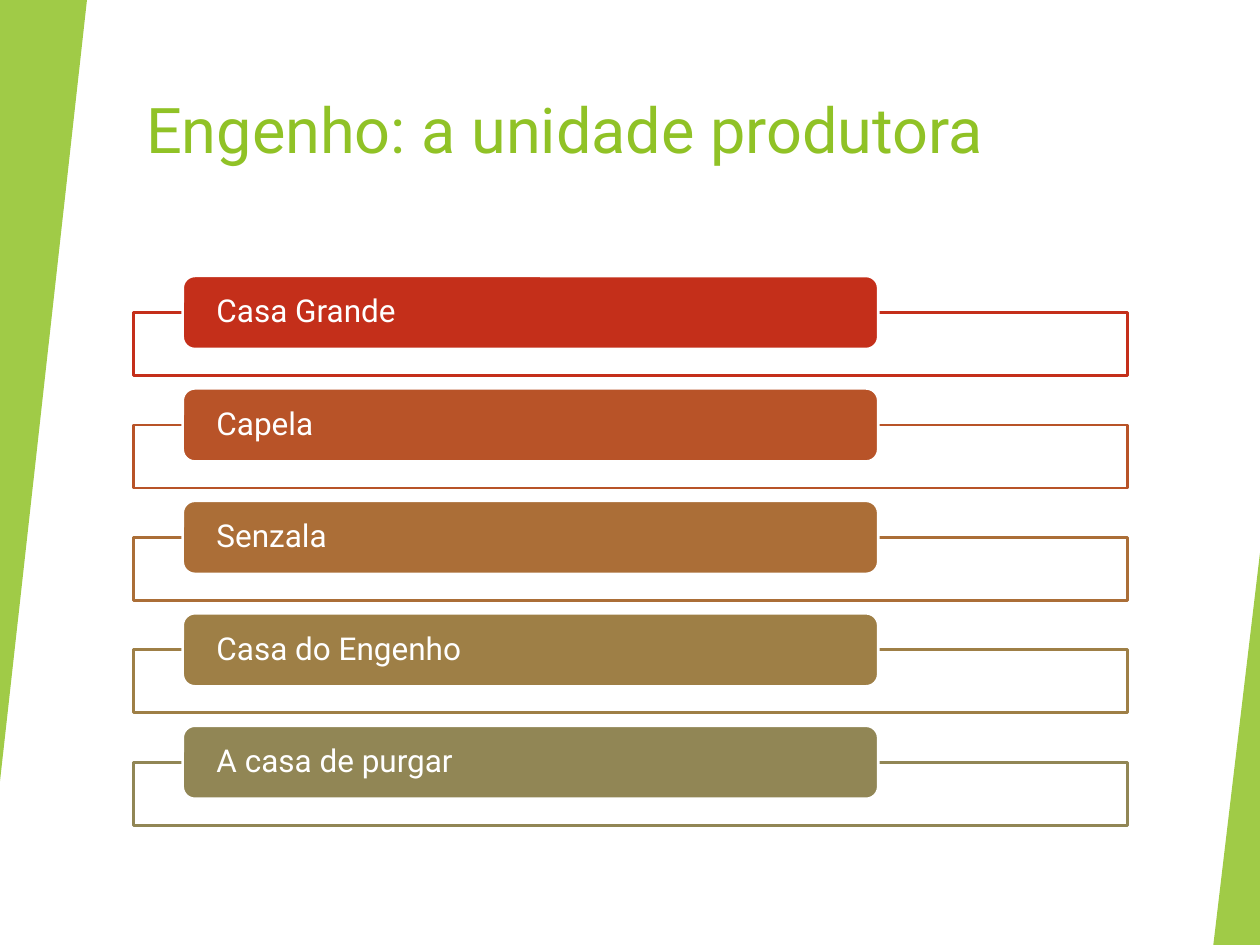
from pptx import Presentation
from pptx.dml.color import RGBColor
from pptx.enum.shapes import MSO_SHAPE as Shape
from pptx.enum.text import MSO_ANCHOR as Anchor, PP_ALIGN as Align
from pptx.util import Inches, Pt

GREEN = RGBColor(0x90, 0xC2, 0x26)
LIGHT_GREEN = RGBColor(0xA0, 0xCB, 0x47)
WHITE = RGBColor(0xFF, 0xFF, 0xFF)
RED = RGBColor(0xC4, 0x2F, 0x1A)
RUST = RGBColor(0xB8, 0x53, 0x28)
COPPER = RGBColor(0xAB, 0x6E, 0x37)
OCHRE = RGBColor(0x9E, 0x7F, 0x46)
OLIVE = RGBColor(0x91, 0x86, 0x55)

PARTS = [
    ("Casa Grande", RED),
    ("Capela", RUST),
    ("Senzala", COPPER),
    ("Casa do Engenho", OCHRE),
    ("A casa de purgar", OLIVE),
]
FIRST_TOP, LAST_TOP = 2.19, 5.76
PITCH = (LAST_TOP - FIRST_TOP) / (len(PARTS) - 1)


def add_box(kind, left, top, width, height, fill, line=None):
    box = page.shapes.add_shape(
        kind, Inches(left), Inches(top), Inches(width), Inches(height))
    box.shadow.inherit = False
    box.fill.solid()
    box.fill.fore_color.rgb = fill
    if line is None:
        box.line.fill.background()
    else:
        box.line.color.rgb = line
        box.line.width = Pt(1.5)
    return box


def write(box, text, size, color, anchor, inset, line_spacing=1.0):
    frame = box.text_frame
    frame.word_wrap = True
    frame.vertical_anchor = anchor
    frame.margin_left = frame.margin_right = Inches(inset)
    para = frame.paragraphs[0]
    para.alignment = Align.LEFT
    para.line_spacing = line_spacing
    span = para.add_run()
    span.text = text
    span.font.name = "Roboto"
    span.font.size = Pt(size)
    span.font.color.rgb = color


deck = Presentation()
deck.slide_width, deck.slide_height = Inches(10), Inches(7.5)
page = deck.slides.add_slide(deck.slide_layouts[5])

title = page.shapes.title
title.left, title.top = Inches(1.06), Inches(0.67)
title.width, title.height = Inches(8.36), Inches(1.2)
write(title, "Engenho: a unidade produtora", 36, GREEN, Anchor.TOP, 0.1)

left_wedge = add_box(Shape.ISOSCELES_TRIANGLE, 0, 0, 0.69, 6.2, LIGHT_GREEN)
left_wedge.rotation = 180
right_wedge = add_box(Shape.ISOSCELES_TRIANGLE, 9.63, 4.39, 0.37, 3.11, LIGHT_GREEN)
for wedge in (left_wedge, right_wedge):
    wedge.adjustments[0] = 1

for index, (name, color) in enumerate(PARTS):
    top = FIRST_TOP + index * PITCH
    add_box(Shape.RECTANGLE, 1.06, top + 0.29, 7.89, 0.5, WHITE, line=color)
    label = add_box(Shape.ROUNDED_RECTANGLE, 1.45, top, 5.52, 0.58, color, line=WHITE)
    write(label, name, 18, WHITE, Anchor.MIDDLE, 0.24, line_spacing=0.9)

deck.save("out.pptx")
